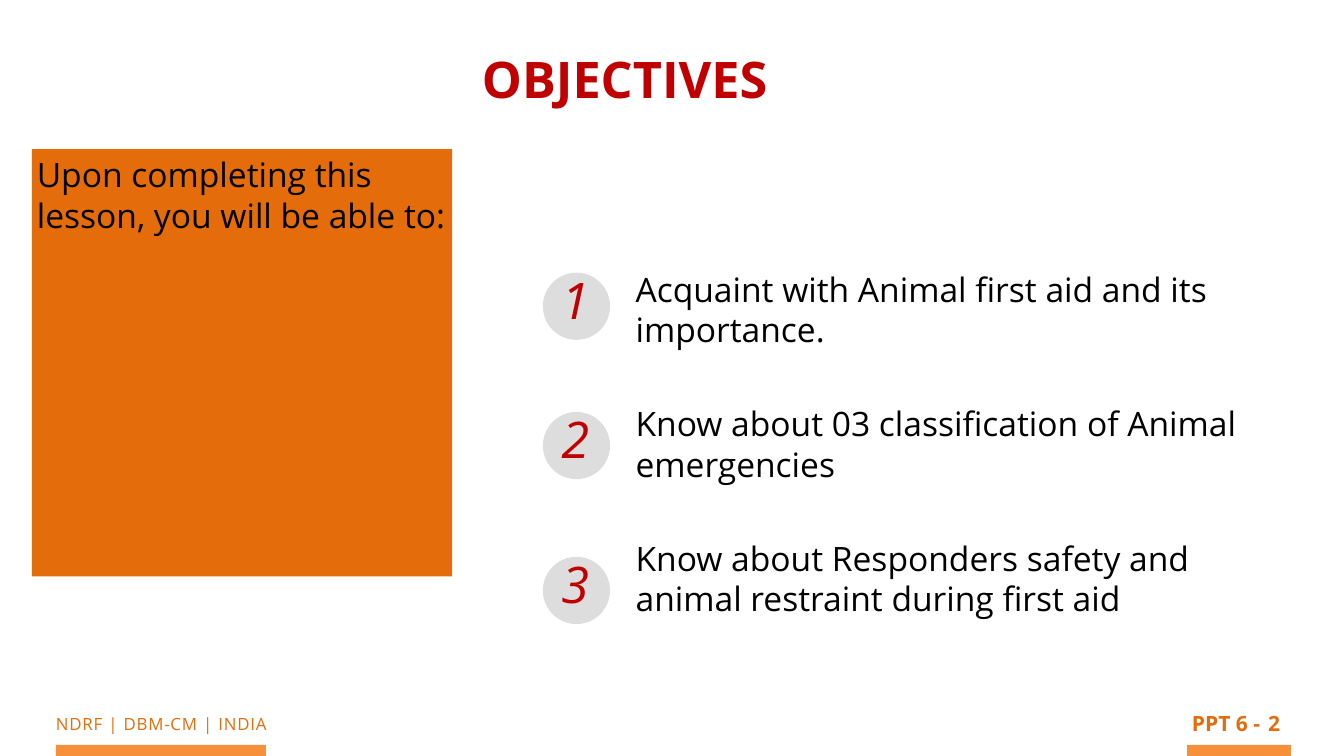
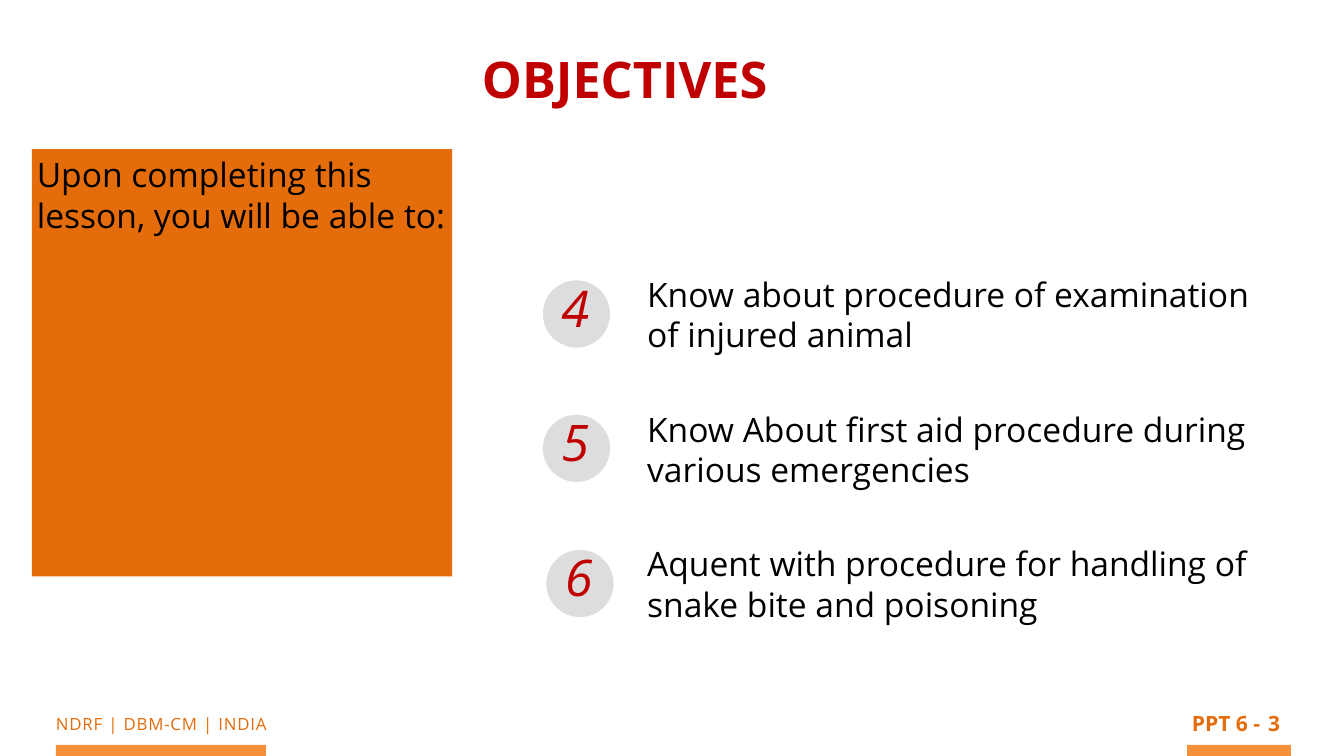
from dataclasses import dataclass

from pptx import Presentation
from pptx.dml.color import RGBColor
from pptx.enum.shapes import MSO_SHAPE
from pptx.enum.text import MSO_ANCHOR, MSO_AUTO_SIZE, PP_ALIGN
from pptx.oxml import parse_xml
from pptx.oxml.ns import nsdecls
from pptx.shapes.autoshape import Shape
from pptx.slide import Slide
from pptx.text.text import TextFrame
from pptx.util import Pt

RECT, OVAL = MSO_SHAPE.RECTANGLE, MSO_SHAPE.OVAL
TOP = MSO_ANCHOR.TOP
LEFT, CENTER = PP_ALIGN.LEFT, PP_ALIGN.CENTER
FIT, FIXED = MSO_AUTO_SIZE.SHAPE_TO_FIT_TEXT, MSO_AUTO_SIZE.NONE


@dataclass(frozen=True)
class Theme:
    font: str = "Open Sans"
    red: str = "C00000"
    orange: str = "E46C0A"
    band: str = "F7903B"
    grey: str = "DDDDDD"
    black: str = "000000"
    large: float = 72
    body: float = 48
    page: float = 30
    foot: float = 24


@dataclass(frozen=True)
class Box:
    left: float
    top: float
    width: float
    height: float

    def lengths(self) -> tuple[Pt, Pt, Pt, Pt]:
        return Pt(self.left), Pt(self.top), Pt(self.width), Pt(self.height)


@dataclass(frozen=True)
class Style:
    size: float
    color: str
    bold: bool = False
    italic: bool = False
    align: PP_ALIGN = LEFT
    inset: float = 6.5
    wrap: bool = True
    track: float = 0


@dataclass(frozen=True)
class Goal:
    number: int
    left: float
    top: float
    text: str


@dataclass(frozen=True)
class Lesson:
    page: int
    area: Box
    goals: tuple[Goal, ...]


THEME = Theme()
TITLE = Style(THEME.large, THEME.red, bold=True)
DIGIT = Style(THEME.large, THEME.red, italic=True)
INTRO = Style(THEME.body, THEME.black, inset=7.2)
LIST = Style(THEME.body, THEME.black)
FOOT = Style(THEME.foot, THEME.orange, align=CENTER, track=1.2)
LABEL = Style(THEME.page, THEME.orange, bold=True, align=CENTER, wrap=False)
PAGE = Style(THEME.page, THEME.orange, bold=True, align=CENTER)
GAP = 77
DISC = 96

LESSONS = (
    Lesson(2, Box(901.5, 377.5, 903, 516), (
        Goal(1, 775.5, 389.5, "Acquaint with Animal first aid and its importance."),
        Goal(2, 775.5, 588.5, "Know about 03 classification of Animal emergencies"),
        Goal(3, 775.5, 795.5, "Know about Responders safety and animal restraint during first aid"),
    )),
    Lesson(3, Box(918, 385, 919.5, 518.5), (
        Goal(4, 775.5, 400.5, "Know about procedure of examination of injured animal"),
        Goal(5, 775.5, 592.5, "Know About first aid procedure during various emergencies"),
        Goal(6, 780.5, 785.5, "Aquent with procedure for handling of snake bite and poisoning"),
    )),
)


def write(frame: TextFrame, lines: list[str], style: Style, gap: float = 0) -> None:
    """Fill a frame with one paragraph a line, parted by the gap."""
    frame.text = "\n".join(lines)
    frame.word_wrap = style.wrap
    frame.auto_size = FIXED if style.wrap else FIT
    frame.vertical_anchor = TOP
    frame.margin_left = frame.margin_right = Pt(style.inset)
    frame.margin_top = frame.margin_bottom = Pt(style.inset)
    for rank, para in enumerate(frame.paragraphs):
        para.alignment = style.align
        para.space_before = Pt(gap if rank else 0)
        for run in para.runs:
            font = run.font
            font.name, font.size = THEME.font, Pt(style.size)
            font.bold, font.italic = style.bold, style.italic
            font.color.rgb = RGBColor.from_string(style.color)
            if style.track:
                run._r.get_or_add_rPr().set("spc", str(round(style.track * 100)))


def place(shape: Shape, box: Box) -> None:
    shape.left, shape.top, shape.width, shape.height = box.lengths()


def add_fill(shapes, kind: MSO_SHAPE, box: Box, color: str) -> Shape:
    shape = shapes.add_shape(kind, *box.lengths())
    shape.shadow.inherit = False
    shape.fill.solid()
    shape.fill.fore_color.rgb = RGBColor.from_string(color)
    shape.line.fill.background()
    return shape


def add_text(shapes, box: Box, text: str, style: Style) -> None:
    write(shapes.add_textbox(*box.lengths()).text_frame, [text], style)


def add_foot(slide: Slide, page: int) -> None:
    shapes = slide.shapes
    add_text(shapes, Box(47.5, 1013, 366, 42), "NDRF | DBM-CM | INDIA", FOOT)
    add_fill(shapes, RECT, Box(80, 1064, 300, 16), THEME.band)
    add_text(shapes, Box(1696, 1008.5, 111, 49), "PPT 6 -", LABEL)
    add_fill(shapes, RECT, Box(1696, 1064, 148, 16), THEME.band)
    add_text(shapes, Box(1805, 1008.5, 30, 53), str(page), PAGE)


def add_badge(slide: Slide, goal: Goal) -> None:
    """Draw a numbered disc as one group."""
    shapes = slide.shapes.add_group_shape().shapes
    add_fill(shapes, OVAL, Box(goal.left, goal.top, DISC, DISC), THEME.grey)
    add_text(shapes, Box(goal.left + 20, goal.top - 11.5, 65, 132.5), str(goal.number), DIGIT)


def add_list(slide: Slide, lesson: Lesson) -> None:
    body = slide.placeholders[1]
    place(body, lesson.area)
    write(body.text_frame, [goal.text for goal in lesson.goals], LIST, GAP)
    for para in body.text_frame.paragraphs:
        props = para._p.get_or_add_pPr()
        props.set("marL", "0")
        props.set("indent", "0")
        props.append(parse_xml(f"<a:buNone {nsdecls('a')}/>"))


def add_lesson(deck: Presentation, lesson: Lesson) -> None:
    slide = deck.slides.add_slide(deck.slide_layouts[1])
    add_foot(slide, lesson.page)
    panel = add_fill(slide.shapes, RECT, Box(45.5, 213, 600.5, 610.5), THEME.orange)
    write(panel.text_frame, ["Upon completing this lesson, you will be able to:"], INTRO)
    place(slide.shapes.title, Box(682, 62, 450, 110))
    write(slide.shapes.title.text_frame, ["OBJECTIVES"], TITLE)
    add_list(slide, lesson)
    for goal in lesson.goals:
        add_badge(slide, goal)


def main() -> None:
    deck = Presentation()
    deck.slide_width, deck.slide_height = Pt(1920), Pt(1080)
    for lesson in LESSONS:
        add_lesson(deck, lesson)
    deck.save("out.pptx")


if __name__ == "__main__":
    main()
